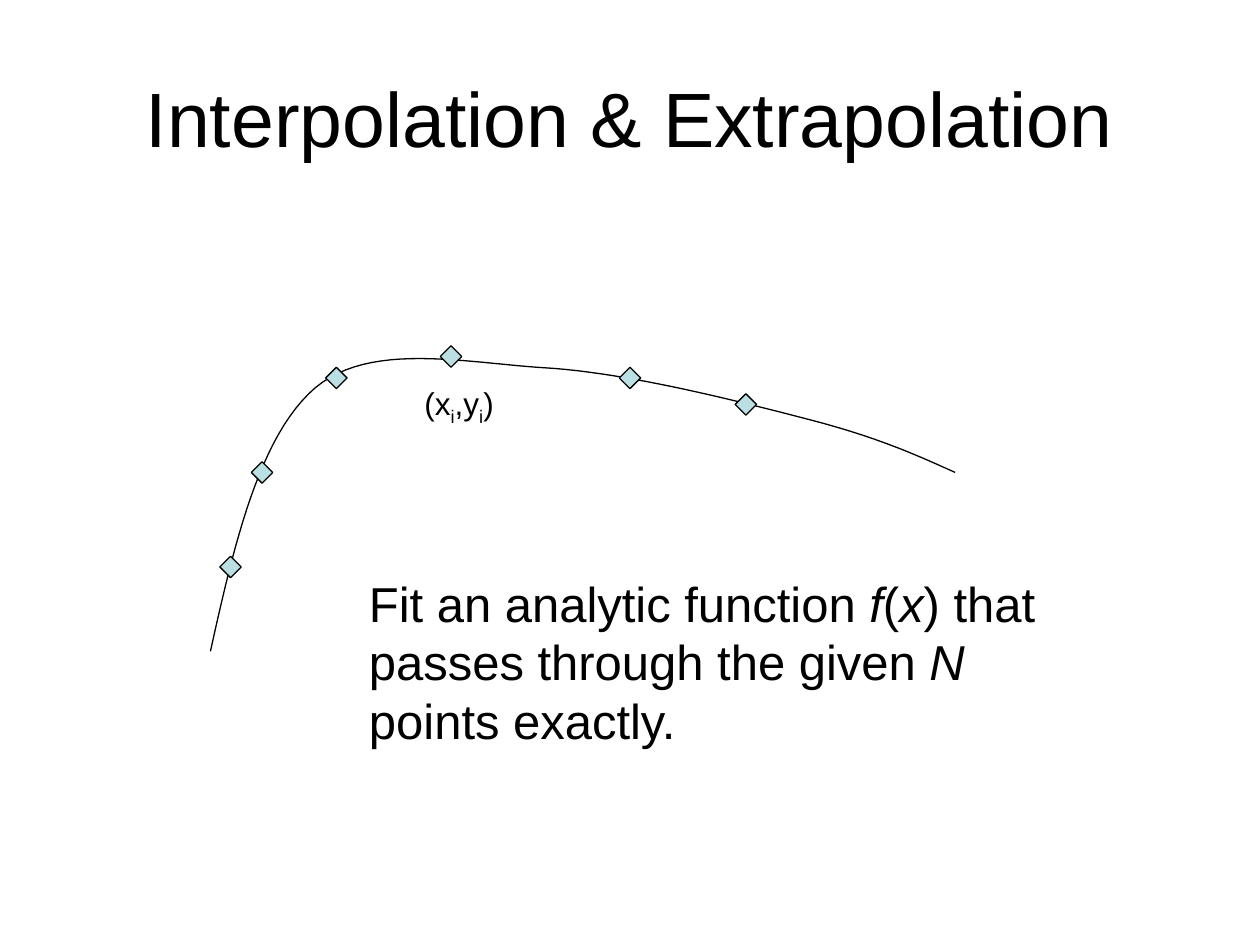
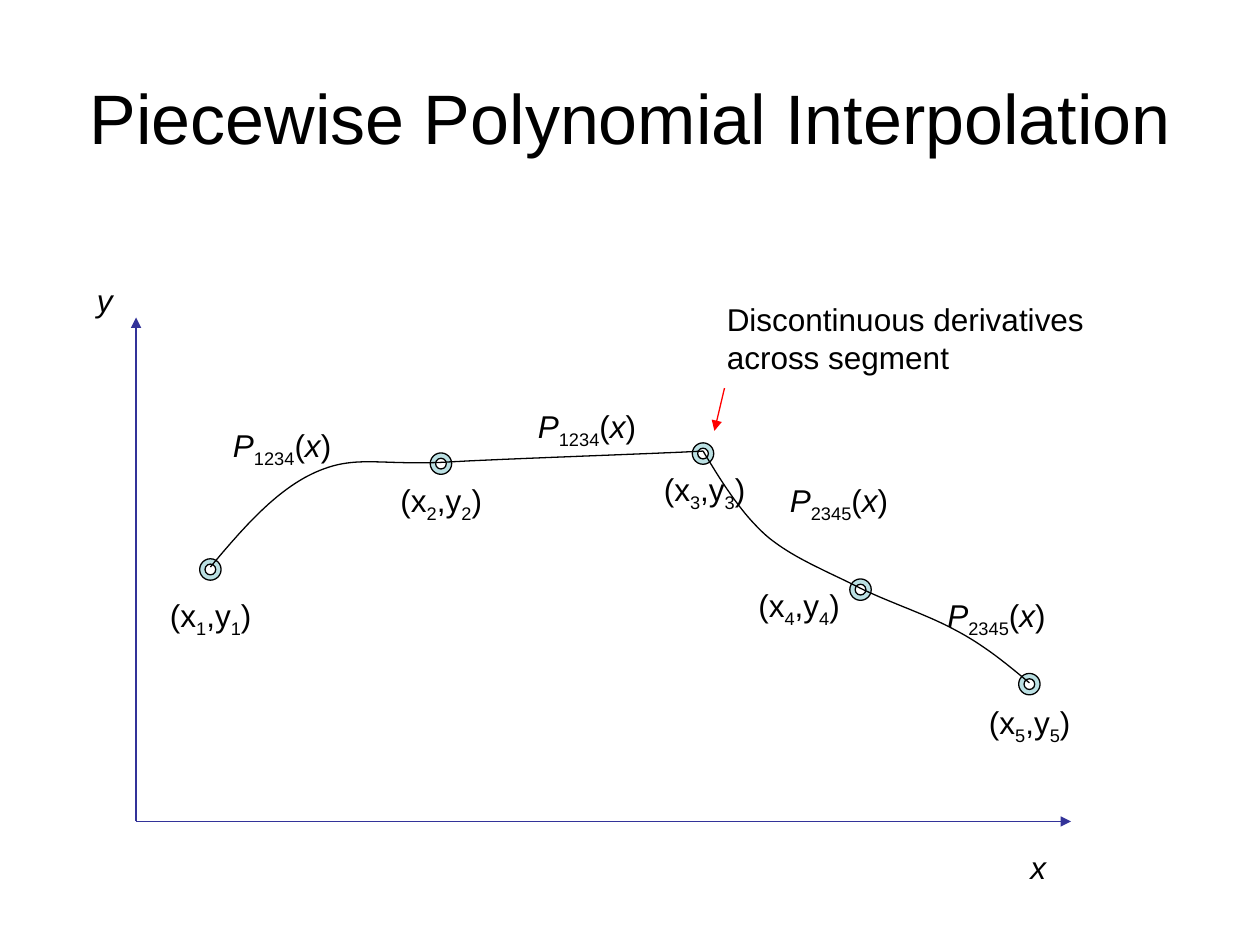
import dataclasses
import typing

import lxml.etree
import pptx
import pptx.dml.color
import pptx.enum.shapes
import pptx.enum.text
import pptx.oxml
import pptx.oxml.ns
import pptx.util

Inches = pptx.util.Inches
Shapes = pptx.enum.shapes.MSO_SHAPE
Point = tuple[float, float]

FONT = "Arial"
BLACK, MARKER_FILL, AXIS_BLUE, ARROW_RED = "000000", "BBE0E3", "333399", "FF0000"
LINE_WIDTH = 0.75
MARKER_SIZE = 0.17
LABEL_HEIGHT = 0.4
CURVE_STEPS = 24
TITLE_ONLY_LAYOUT = 5


@dataclasses.dataclass(frozen=True)
class Piece:
    text: str
    italic: bool = False
    subscript: bool = False


@dataclasses.dataclass(frozen=True)
class Label:
    left: float
    top: float
    width: float
    pieces: list[Piece]
    height: float = LABEL_HEIGHT
    size: int = 18


@dataclasses.dataclass(frozen=True)
class Arrow:
    start: Point
    end: Point
    color: str


def coordinates(index: str) -> list[Piece]:
    subscript = Piece(index, subscript=True)
    return [Piece("(x"), subscript, Piece(",y"), subscript, Piece(")")]


def polynomial(indices: str) -> list[Piece]:
    return [Piece("P", italic=True), Piece(indices, subscript=True),
            Piece("("), Piece("x", italic=True), Piece(")")]


def rgb(color: str) -> pptx.dml.color.RGBColor:
    return pptx.dml.color.RGBColor.from_string(color)


def style_font(font, size: int) -> None:
    font.name = FONT
    font.size = pptx.util.Pt(size)
    font.color.rgb = rgb(BLACK)


def style_line(line, color: str = BLACK) -> None:
    line.color.rgb = rgb(color)
    line.width = pptx.util.Pt(LINE_WIDTH)


def add_titled_slide(presentation, title: str, size: int):
    slide = presentation.slides.add_slide(presentation.slide_layouts[TITLE_ONLY_LAYOUT])
    shape = slide.shapes.title
    shape.left, shape.top = Inches(0.5), Inches(0.3)
    shape.width, shape.height = Inches(9), Inches(1.25)
    text_frame = shape.text_frame
    text_frame.text = title
    text_frame.auto_size = pptx.enum.text.MSO_AUTO_SIZE.NONE
    text_frame.vertical_anchor = pptx.enum.text.MSO_ANCHOR.MIDDLE
    paragraph = text_frame.paragraphs[0]
    paragraph.alignment = pptx.enum.text.PP_ALIGN.CENTER
    style_font(paragraph.runs[0].font, size)
    return slide


def add_label(slide, label: Label) -> None:
    box = slide.shapes.add_textbox(Inches(label.left), Inches(label.top),
                                   Inches(label.width), Inches(label.height))
    box.text_frame.word_wrap = True
    paragraph = box.text_frame.paragraphs[0]
    for piece in label.pieces:
        run = paragraph.add_run()
        run.text = piece.text
        style_font(run.font, label.size)
        run.font.italic = piece.italic
        if piece.subscript:
            run._r.get_or_add_rPr().set("baseline", "-25000")


def add_marker(slide, kind: Shapes, center: Point) -> None:
    left, top = (Inches(value - MARKER_SIZE / 2) for value in center)
    marker = slide.shapes.add_shape(kind, left, top, Inches(MARKER_SIZE), Inches(MARKER_SIZE))
    marker.shadow.inherit = False
    marker.fill.solid()
    marker.fill.fore_color.rgb = rgb(MARKER_FILL)
    style_line(marker.line)


def bezier_points(controls: list[Point]) -> typing.Iterator[Point]:
    """Sample a chain of cubic segments; neighbours share an end point."""
    yield controls[0]
    for first in range(0, len(controls) - 1, 3):
        segment = controls[first:first + 4]
        for step in range(1, CURVE_STEPS + 1):
            t = step / CURVE_STEPS
            weights = ((1 - t) ** 3, 3 * t * (1 - t) ** 2, 3 * t ** 2 * (1 - t), t ** 3)
            yield (sum(w * x for w, (x, _) in zip(weights, segment)),
                   sum(w * y for w, (_, y) in zip(weights, segment)))


def add_curve(slide, controls: list[Point]) -> None:
    start, *others = [(Inches(x), Inches(y)) for x, y in bezier_points(controls)]
    builder = slide.shapes.build_freeform(*start)
    builder.add_line_segments(others, close=False)
    curve = builder.convert_to_shape()
    curve.shadow.inherit = False
    curve.fill.background()
    style_line(curve.line)


def add_arrow(slide, arrow: Arrow) -> None:
    connector = slide.shapes.add_connector(
        pptx.enum.shapes.MSO_CONNECTOR.STRAIGHT,
        *(Inches(value) for value in arrow.start + arrow.end))
    style_line(connector.line, arrow.color)
    qualified = pptx.oxml.ns.qn
    properties = connector._element.spPr
    outline = properties.find(qualified("a:ln"))
    lxml.etree.SubElement(outline, qualified("a:tailEnd"), type="triangle")
    lxml.etree.SubElement(properties, qualified("a:effectLst"))


def build_interpolation_slide(presentation) -> None:
    slide = add_titled_slide(presentation, "Interpolation & Extrapolation", 44)
    add_curve(slide, [
        (1.67, 5.17), (1.86, 4.31), (2.06, 3.46), (2.5, 3.08),
        (2.94, 2.71), (3.68, 2.88), (4.33, 2.92),
        (4.99, 2.96), (5.88, 3.19), (6.42, 3.33),
        (6.96, 3.47), (7.27, 3.61), (7.58, 3.75)])
    for center in [(1.83, 4.5), (2.08, 3.75), (2.67, 3), (3.58, 2.83), (5, 3), (5.92, 3.21)]:
        add_marker(slide, Shapes.DIAMOND, center)
    add_label(slide, Label(3.27, 3, 0.89, coordinates("i")))
    add_label(slide, Label(2.83, 4.5, 5.75, [
        Piece("Fit an analytic function "), Piece("f", italic=True), Piece("("),
        Piece("x", italic=True), Piece(") that passes through the given "),
        Piece("N", italic=True), Piece(" points exactly.")], height=1.5, size=28))


def build_piecewise_slide(presentation) -> None:
    slide = add_titled_slide(presentation, "Piecewise Polynomial Interpolation", 40)
    for center in [(1.67, 4.52), (3.5, 3.68), (5.58, 3.6), (6.83, 4.68), (8.17, 5.43)]:
        add_marker(slide, Shapes.DONUT, center)

    point_label_corners = [(1.25, 4.68), (3.08, 3.77), (5.17, 3.68), (5.92, 4.6), (7.75, 5.53)]
    for number, (left, top) in enumerate(point_label_corners, start=1):
        add_label(slide, Label(left, top, 0.92, coordinates(str(number))))
    for label in [
        Label(1.75, 3.33, 1.17, polynomial("1234")),
        Label(4.17, 3.18, 1.08, polynomial("1234")),
        Label(6.17, 3.77, 1.08, polynomial("2345")),
        Label(7.42, 4.68, 1.25, polynomial("2345")),
        Label(8.08, 6.68, 0.33, [Piece("x", italic=True)]),
        Label(0.67, 2.18, 0.33, [Piece("y", italic=True)]),
        Label(5.67, 2.33, 3.67, [Piece("Discontinuous derivatives across segment")], height=0.7),
    ]:
        add_label(slide, label)

    axis_origin = (1.08, 6.52)
    for arrow in [
        Arrow(axis_origin, (8.5, 6.52), AXIS_BLUE),
        Arrow(axis_origin, (1.08, 2.52), AXIS_BLUE),
        Arrow((5.75, 3.08), (5.67, 3.42), ARROW_RED),
    ]:
        add_arrow(slide, arrow)

    segment_joint = (5.58, 3.58)
    add_curve(slide, [
        (1.67, 4.5), (1.93, 4.19), (2.19, 3.89), (2.5, 3.75),
        (2.81, 3.61), (2.99, 3.69), (3.5, 3.67),
        (4.01, 3.64), (5.24, 3.6), segment_joint])
    add_curve(slide, [
        segment_joint, (5.73, 3.83), (5.88, 4.07), (6.08, 4.25),
        (6.29, 4.43), (6.58, 4.54), (6.83, 4.67),
        (7.08, 4.79), (7.36, 4.88), (7.58, 5),
        (7.81, 5.12), (7.99, 5.27), (8.17, 5.42)])


def main() -> None:
    presentation = pptx.Presentation()
    presentation.slide_width, presentation.slide_height = Inches(10), Inches(7.5)
    build_interpolation_slide(presentation)
    build_piecewise_slide(presentation)
    presentation.save("out.pptx")


if __name__ == "__main__":
    main()
